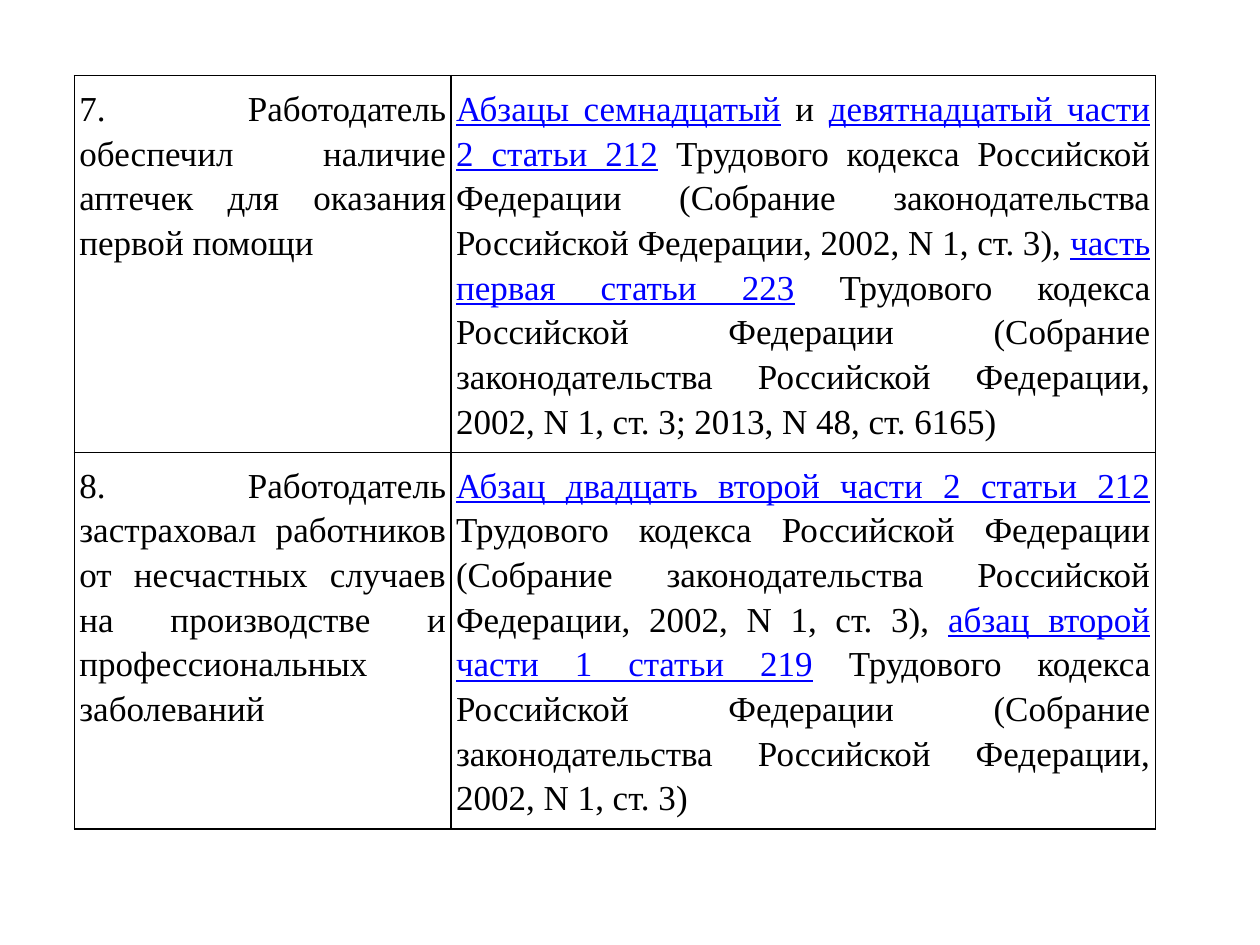
"""Build a slide with a table of labour protection requirements and their legal grounds."""
from lxml import etree
from pptx import Presentation
from pptx.dml.color import RGBColor
from pptx.enum import text
from pptx.oxml import ns
from pptx.util import Inches, Pt

COLORS = {"ink": "000000", "link": "0000FF"}
CODE = " Трудового кодекса Российской Федерации (Собрание законодательства Российской Федерации, 2002, N 1, ст. 3"

REQUIREMENTS = [
    (
        [("7. Работодатель обеспечил наличие аптечек для оказания первой помощи", False)],
        [
            ("Абзацы семнадцатый", True),
            (" и ", False),
            ("девятнадцатый части 2 статьи 212", True),
            (CODE + "), ", False),
            ("часть первая статьи 223", True),
            (CODE + "; 2013, N 48, ст. 6165)", False),
        ],
    ),
    (
        [("8. Работодатель застраховал работников от несчастных случаев на производстве "
          "и профессиональных заболеваний", False)],
        [
            ("Абзац двадцать второй части 2 статьи 212", True),
            (CODE + "), ", False),
            ("абзац второй части 1 статьи 219", True),
            (CODE + ")", False),
        ],
    ),
]


class SlideBuilder:
    """Hold the text style and the current slide."""

    font_name = "Times New Roman"
    font_size = Pt(20)
    line_spacing = 1.15
    border_width = Pt(1)

    def __init__(self, page):
        self.page = page

    def table(self, left, top, widths, heights, rows):
        """Add a bordered table filled with rows of spans."""
        frame = self.page.shapes.add_table(
            len(heights), len(widths), Inches(left), Inches(top),
            Inches(sum(widths)), Inches(sum(heights)))
        table = frame.table
        table.first_row = table.horz_banding = False
        for column, width in zip(table.columns, widths):
            column.width = Inches(width)
        for row, height, contents in zip(table.rows, heights, rows):
            row.height = Inches(height)
            for cell, spans in zip(row.cells, contents):
                self.cell(cell, spans)

    def cell(self, cell, spans):
        """Set margins, borders and justified text of a cell."""
        cell.margin_left = cell.margin_right = Inches(0.04)
        cell.margin_top = cell.margin_bottom = Inches(0.07)
        self.borders(cell)
        cell.fill.background()
        para = cell.text_frame.paragraphs[0]
        para.alignment = text.PP_ALIGN.JUSTIFY
        para.line_spacing = self.line_spacing
        para.font.name = self.font_name
        para.font.size = self.font_size
        for words, is_link in spans:
            span = para.add_run()
            span.text = words
            span.font.underline = is_link
            span.font.color.rgb = RGBColor.from_string(COLORS["link" if is_link else "ink"])

    def borders(self, cell):
        """Draw a solid line on every side of a cell."""
        properties = cell._tc.get_or_add_tcPr()
        for side in ("lnL", "lnR", "lnT", "lnB"):
            line = etree.SubElement(properties, ns.qn(f"a:{side}"), w=str(self.border_width))
            fill = etree.SubElement(line, ns.qn("a:solidFill"))
            etree.SubElement(fill, ns.qn("a:srgbClr"), val=COLORS["ink"])


def main():
    """Create and save the deck."""
    deck = Presentation()
    deck.slide_width, deck.slide_height = Inches(10), Inches(7.5)
    builder = SlideBuilder(deck.slides.add_slide(deck.slide_layouts[6]))
    builder.table(0.59, 0.6, [2.99, 5.59], [2.99, 2.99], REQUIREMENTS)
    deck.save("out.pptx")


if __name__ == "__main__":
    main()
